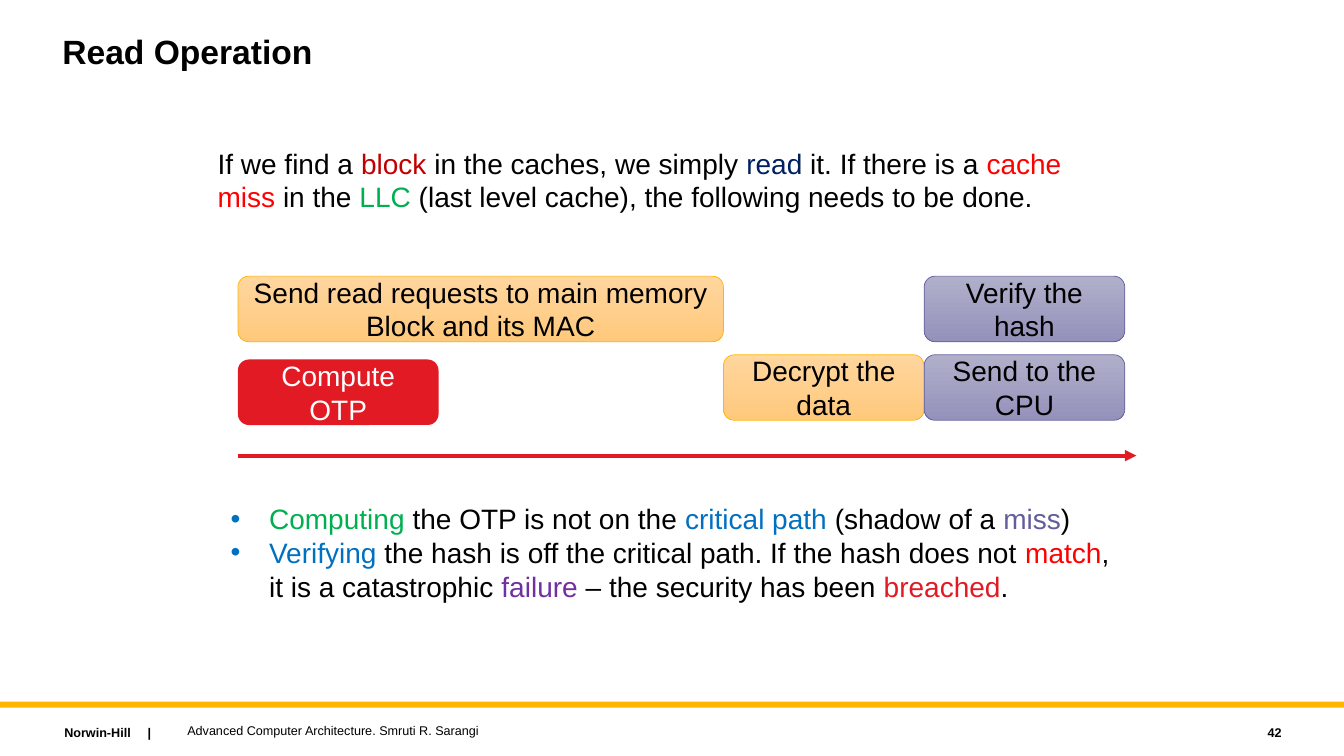
from dataclasses import dataclass

from lxml.etree import SubElement
from pptx import Presentation
from pptx.dml.color import RGBColor
from pptx.enum.shapes import MSO_CONNECTOR, MSO_SHAPE
from pptx.enum.text import MSO_ANCHOR, MSO_AUTO_SIZE, PP_ALIGN
from pptx.oxml.ns import qn
from pptx.util import Inches, Pt


@dataclass(frozen=True)
class Theme:
    font: str = "Arial"
    title: int = 24
    body: int = 20
    footer: int = 9
    black: str = "000000"
    white: str = "FFFFFF"
    gold: str = "FFB600"
    red: str = "E21A23"
    bright_red: str = "FF0000"
    dark_red: str = "C00000"
    navy: str = "002060"
    blue: str = "0070C0"
    green: str = "00B050"
    purple: str = "7030A0"
    slate: str = "625D9C"
    gold_shades: tuple = ("FFD69E", "FFC97C")
    slate_shades: tuple = ("B0AFCA", "9492BB")


THEME = Theme()
WIDTH, HEIGHT = Inches(13.33), Inches(7.5)

# Timeline grid, in percent of the slide's width and height
LEFT, TOP = 17.7, 36.53
STEP, ROW, BOX_HEIGHT = 14.93, 10.4, 8.67
FETCH_STEPS = 2.42


def across(percent):
    return round(WIDTH * percent / 100)


def down(percent):
    return round(HEIGHT * percent / 100)


def area(left, top, width, height):
    return across(left), down(top), across(width), down(height)


def color(code):
    return RGBColor.from_string(code)


def set_font(para, size, code=THEME.black, bold=False):
    font = para.font
    font.name, font.size, font.bold = THEME.font, Pt(size), bold
    font.color.rgb = color(code)


def add_spans(para, spans):
    """Write plain strings and (text, colour) pairs; a newline breaks the line."""
    for span in spans:
        text, code = (span, THEME.black) if isinstance(span, str) else span
        for index, line in enumerate(text.split("\n")):
            if index:
                para.add_line_break()
            run = para.add_run()
            run.text = line
            run.font.color.rgb = color(code)


def add_text(page, place, spans, size, bold=False, align=PP_ALIGN.LEFT,
             anchor=MSO_ANCHOR.TOP, tab=None):
    frame = page.shapes.add_textbox(*area(*place)).text_frame
    frame.word_wrap = True
    frame.vertical_anchor = anchor
    para = frame.paragraphs[0]
    para.alignment = align
    if tab:
        tabs = SubElement(para._p.get_or_add_pPr(), qn("a:tabLst"))
        SubElement(tabs, qn("a:tab"), pos=str(across(tab)), algn="l")
    set_font(para, size, bold=bold)
    add_spans(para, spans)
    return para


def add_bullets(page, place, items):
    frame = page.shapes.add_textbox(*area(*place)).text_frame
    frame.word_wrap = False
    frame.auto_size = MSO_AUTO_SIZE.SHAPE_TO_FIT_TEXT
    indent = Inches(0.38)
    for index, spans in enumerate(items):
        para = frame.add_paragraph() if index else frame.paragraphs[0]
        properties = para._p.get_or_add_pPr()
        properties.set("marL", str(indent))
        properties.set("indent", str(-indent))
        bullet_color = SubElement(properties, qn("a:buClr"))
        SubElement(bullet_color, qn("a:srgbClr"), val=THEME.blue)
        SubElement(properties, qn("a:buFont"), typeface=THEME.font)
        SubElement(properties, qn("a:buChar"), char="•")
        set_font(para, THEME.body)
        add_spans(para, spans)


def add_task(page, step, row, steps, text, shades, edge=None, ink=THEME.black):
    """Place one rounded task box on the timeline grid."""
    place = area(LEFT + step * STEP, TOP + row * ROW, steps * STEP, BOX_HEIGHT)
    box = page.shapes.add_shape(MSO_SHAPE.ROUNDED_RECTANGLE, *place)
    box.shadow.inherit = False
    if len(shades) > 1:
        box.fill.gradient()
        box.fill.gradient_angle = 270
        for stop, shade in zip(box.fill.gradient_stops, shades):
            stop.color.rgb = color(shade)
    else:
        box.fill.solid()
        box.fill.fore_color.rgb = color(shades[0])
    if edge:
        box.line.color.rgb = color(edge)
        box.line.width = Pt(0.5)
    else:
        box.line.fill.background()
    frame = box.text_frame
    frame.word_wrap = True
    frame.vertical_anchor = MSO_ANCHOR.MIDDLE
    para = frame.paragraphs[0]
    para.alignment = PP_ALIGN.CENTER
    set_font(para, THEME.body, ink)
    add_spans(para, [(text, ink)])


def add_time_arrow(page, start, end, height):
    arrow = page.shapes.add_connector(
        MSO_CONNECTOR.STRAIGHT, across(start), down(height), across(end), down(height))
    arrow.line.color.rgb = color(THEME.red)
    arrow.line.width = Pt(2.75)
    SubElement(arrow.line._get_or_add_ln(), qn("a:tailEnd"), type="triangle")
    SubElement(arrow._element.spPr, qn("a:effectLst"))


def add_footer(page):
    rule = page.shapes.add_shape(MSO_SHAPE.RECTANGLE, *area(0, 92.8, 100, 0.8))
    rule.shadow.inherit = False
    rule.fill.solid()
    rule.fill.fore_color.rgb = color(THEME.gold)
    rule.line.fill.background()
    add_text(page, (4.05, 95.2, 17.03, 3.33), ["Norwin-Hill\t|"], THEME.footer,
             bold=True, tab=6.2)
    add_text(page, (13.2, 94.93, 60.02, 3.33),
             ["Advanced Computer Architecture. Smruti R. Sarangi"],
             THEME.footer, anchor=MSO_ANCHOR.MIDDLE)
    add_text(page, (85.6, 95.2, 10.5, 3.33), ["42"], THEME.footer, bold=True,
             align=PP_ALIGN.RIGHT, anchor=MSO_ANCHOR.MIDDLE)


def main():
    deck = Presentation()
    deck.slide_width, deck.slide_height = WIDTH, HEIGHT
    page = deck.slides.add_slide(deck.slide_layouts[6])
    add_footer(page)

    # Title and introduction
    title = add_text(page, (3.9, 4, 75.02, 12), ["Read Operation"], THEME.title, bold=True)
    title.line_spacing = 0.9
    add_text(page, (15.45, 18.67, 67.22, 12), [
        "If we find a ", ("block", THEME.dark_red), " in the caches, we simply ",
        ("read", THEME.navy), " it. If there is a ", ("cache miss ", THEME.bright_red),
        "in the ", ("LLC ", THEME.green),
        "(last level cache), the following needs to be done.",
    ], THEME.body)

    # Timeline of the read
    gold = (THEME.gold_shades, THEME.gold)
    slate = (THEME.slate_shades, THEME.slate)
    add_time_arrow(page, LEFT, 84.55, 60.27)
    add_task(page, 0, 0, FETCH_STEPS,
             "Send read requests to main memory\nBlock and its MAC", *gold)
    add_task(page, 0, 1.06, 1, "Compute OTP", (THEME.red,), ink=THEME.white)
    add_task(page, FETCH_STEPS, 1, 1, "Decrypt the data", *gold)
    for row, text in ((1, "Send to the CPU"), (0, "Verify the hash")):
        add_task(page, FETCH_STEPS + 1, row, 1, text, *slate)

    # Conclusions
    add_bullets(page, (16.43, 65.73, 67.22, 14.8), [
        [("Computing", THEME.green), " the OTP is not on the ",
         ("critical path ", THEME.blue), "(shadow of a ", ("miss", THEME.slate), ")"],
        [("Verifying", THEME.blue),
         " the hash is off the critical path. If the hash does not ",
         ("match", THEME.bright_red), ",\nit is a catastrophic ",
         ("failure", THEME.purple), " – the security has been ",
         ("breached", THEME.red), "."],
    ])
    deck.save("out.pptx")


if __name__ == "__main__":
    main()
